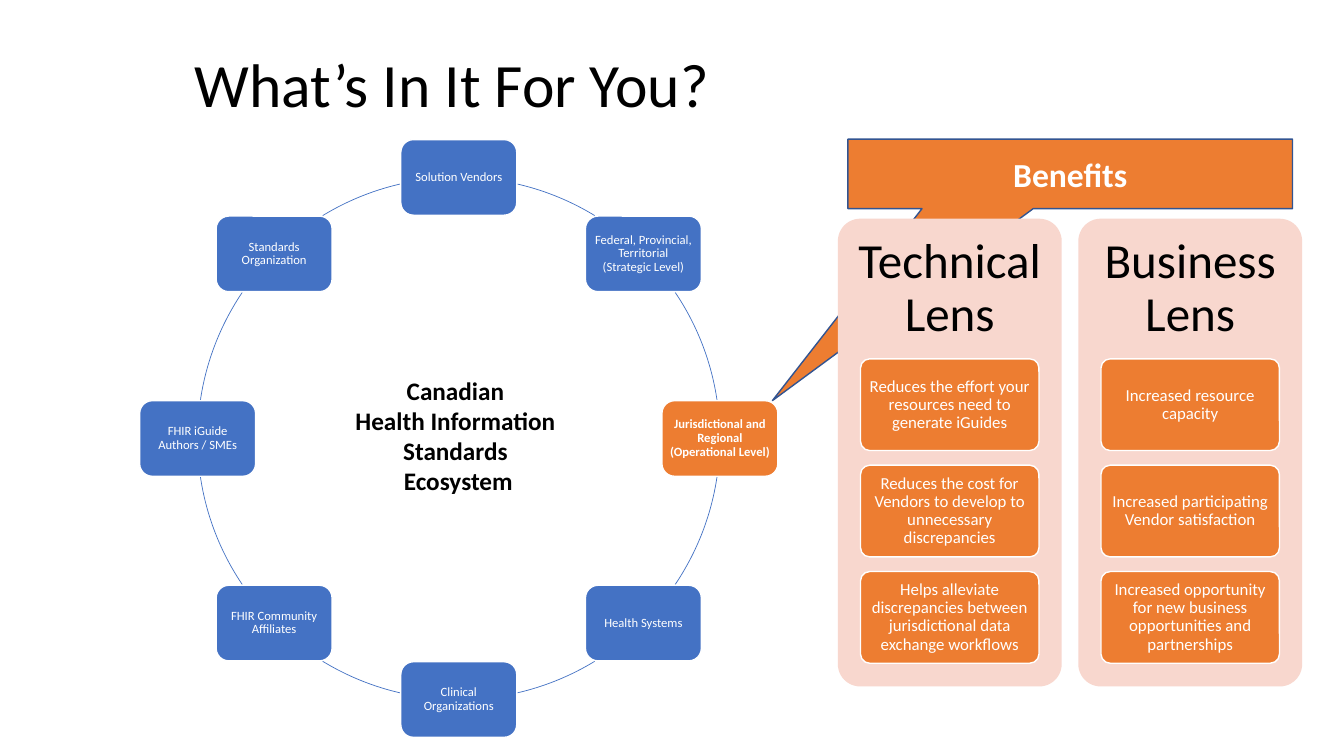
import math

import pptx
import pptx.dml.color
import pptx.enum.shapes
import pptx.enum.text
import pptx.util

SHAPE = pptx.enum.shapes.MSO_SHAPE
ALIGN = pptx.enum.text.PP_ALIGN
ANCHOR = pptx.enum.text.MSO_ANCHOR

COLOURS = {
    "ink": "000000",
    "white": "FFFFFF",
    "blue": "4472C4",
    "orange": "ED7D31",
    "navy": "325491",
    "peach": "F8D7CE",
}

# Clockwise from the right-hand side of the ring.
AUDIENCES = [
    "Jurisdictional and Regional (Operational Level)",
    "Health Systems",
    "Clinical Organizations",
    "FHIR Community Affiliates",
    "FHIR iGuide Authors / SMEs",
    "Standards Organization",
    "Solution Vendors",
    "Federal, Provincial, Territorial (Strategic Level)",
]
LENSES = {
    "Technical Lens": [
        "Reduces the effort your resources need to generate iGuides",
        "Reduces the cost for Vendors to develop to unnecessary discrepancies",
        "Helps alleviate discrepancies between jurisdictional data exchange workflows",
    ],
    "Business Lens": [
        "Increased resource capacity",
        "Increased participating Vendor satisfaction",
        "Increased opportunity for new business opportunities and partnerships",
    ],
}


class Board:
    """Draws on one slide; places are (column, row, columns, rows) of a 0.1 inch grid."""

    cell = pptx.util.Inches(0.1)
    font = "Calibri"

    def __init__(self, slide):
        self.slide = slide

    def lengths(self, place):
        return [round(cells * self.cell) for cells in place]

    def colour(self, name):
        return pptx.dml.color.RGBColor.from_string(COLOURS[name])

    def fill_text(self, frame, lines, size, ink, bold=False, align=ALIGN.CENTER,
                  spacing=1.0, inset=None, anchor=ANCHOR.MIDDLE):
        frame_format = {"word_wrap": True, "vertical_anchor": anchor}
        if inset is not None:
            for side in ("left", "top", "right", "bottom"):
                frame_format[f"margin_{side}"] = round(inset * self.cell)
        for key, value in frame_format.items():
            setattr(frame, key, value)
        font_format = {"name": self.font, "size": pptx.util.Pt(size), "bold": bold}
        for index, line in enumerate(lines):
            paragraph = frame.add_paragraph() if index else frame.paragraphs[0]
            paragraph.alignment = align
            paragraph.line_spacing = spacing
            run = paragraph.add_run()
            run.text = line
            for key, value in font_format.items():
                setattr(run.font, key, value)
            run.font.color.rgb = self.colour(ink)

    def label(self, place, lines, size, ink="ink", **style):
        box = self.slide.shapes.add_textbox(*self.lengths(place))
        self.fill_text(box.text_frame, lines, size, ink, **style)

    def shape(self, kind, place, fill=None, line=None, weight=1, adjust=()):
        shape = self.slide.shapes.add_shape(kind, *self.lengths(place))
        shape.shadow.inherit = False
        for index, value in enumerate(adjust):
            shape.adjustments[index] = value
        if fill:
            shape.fill.solid()
            shape.fill.fore_color.rgb = self.colour(fill)
        else:
            shape.fill.background()
        if line:
            shape.line.color.rgb = self.colour(line)
            shape.line.width = pptx.util.Pt(weight)
        else:
            shape.line.fill.background()
        return shape

    def card(self, place, caption, size, fill, inset, adjust=(), bold=False):
        card = self.shape(SHAPE.ROUNDED_RECTANGLE, place, fill, "white", adjust=adjust)
        self.fill_text(card.text_frame, [caption], size, "white", bold,
                       spacing=0.9, inset=inset)

    def arc(self, centre, radius, start, end):
        """Draw part of a circle, clockwise between two angles in degrees."""
        x, y = centre
        place = (x - radius, y - radius, 2 * radius, 2 * radius)
        # Adjustments count 100000ths, angles 60000ths of a degree.
        self.shape(SHAPE.ARC, place, line="blue", weight=0.5,
                   adjust=(start * 0.6, end * 0.6))


def draw_ecosystem(board):
    centre, radius = (45.5, 43.5), 25.9
    width, height = 11.5, 7.5
    for start, end in ((8.4, 34), (58.6, 77)):
        for half_turn in (0, 180):
            board.arc(centre, radius, half_turn + start, half_turn + end)
            board.arc(centre, radius, half_turn + 180 - end, half_turn + 180 - start)
    for index, audience in enumerate(AUDIENCES):
        angle = index * math.tau / len(AUDIENCES)
        left = centre[0] + radius * math.cos(angle) - width / 2
        top = centre[1] + radius * math.sin(angle) - height / 2
        chosen = index == 0
        board.card((left, top, width, height), audience, 9,
                   "orange" if chosen else "blue", inset=0.4, bold=chosen)
    board.label((28.7, 36.7, 33.5, 13.1),
                ["Canadian ", "Health Information ", "Standards ", "Ecosystem"],
                18, bold=True, anchor=ANCHOR.TOP)


def draw_benefits(board):
    banner = board.shape(SHAPE.RECTANGULAR_CALLOUT, (84.1, 13.8, 44.1, 6.9),
                         "orange", "navy", adjust=(-0.67, 3.26))
    board.fill_text(banner.text_frame, ["Benefits"], 24, "white", bold=True)
    top, width, heading_height = 21.7, 22.2, 13.9
    for column, (lens, benefits) in enumerate(LENSES.items()):
        left = 83.1 + column * 23.85
        board.shape(SHAPE.ROUNDED_RECTANGLE, (left, top, width, 46.4),
                    "peach", adjust=(0.1,))
        board.label((left, top, width, heading_height), [lens], 35,
                    spacing=0.9, inset=1.5)
        for row, benefit in enumerate(benefits):
            place = (left + 2.25, top + heading_height + row * 10.55, 17.7, 9.1)
            board.card(place, benefit, 12, "orange", inset=0.3, adjust=(0.1,))


def main():
    deck = pptx.Presentation()
    deck.slide_width = pptx.util.Inches(13.33)
    deck.slide_height = pptx.util.Inches(7.5)
    board = Board(deck.slides.add_slide(deck.slide_layouts[6]))
    board.label((18.3, 1.4, 115, 14.5), ["What’s In It For You?"], 44,
                align=ALIGN.LEFT, spacing=0.9)
    draw_ecosystem(board)
    draw_benefits(board)
    deck.save("out.pptx")


if __name__ == "__main__":
    main()
